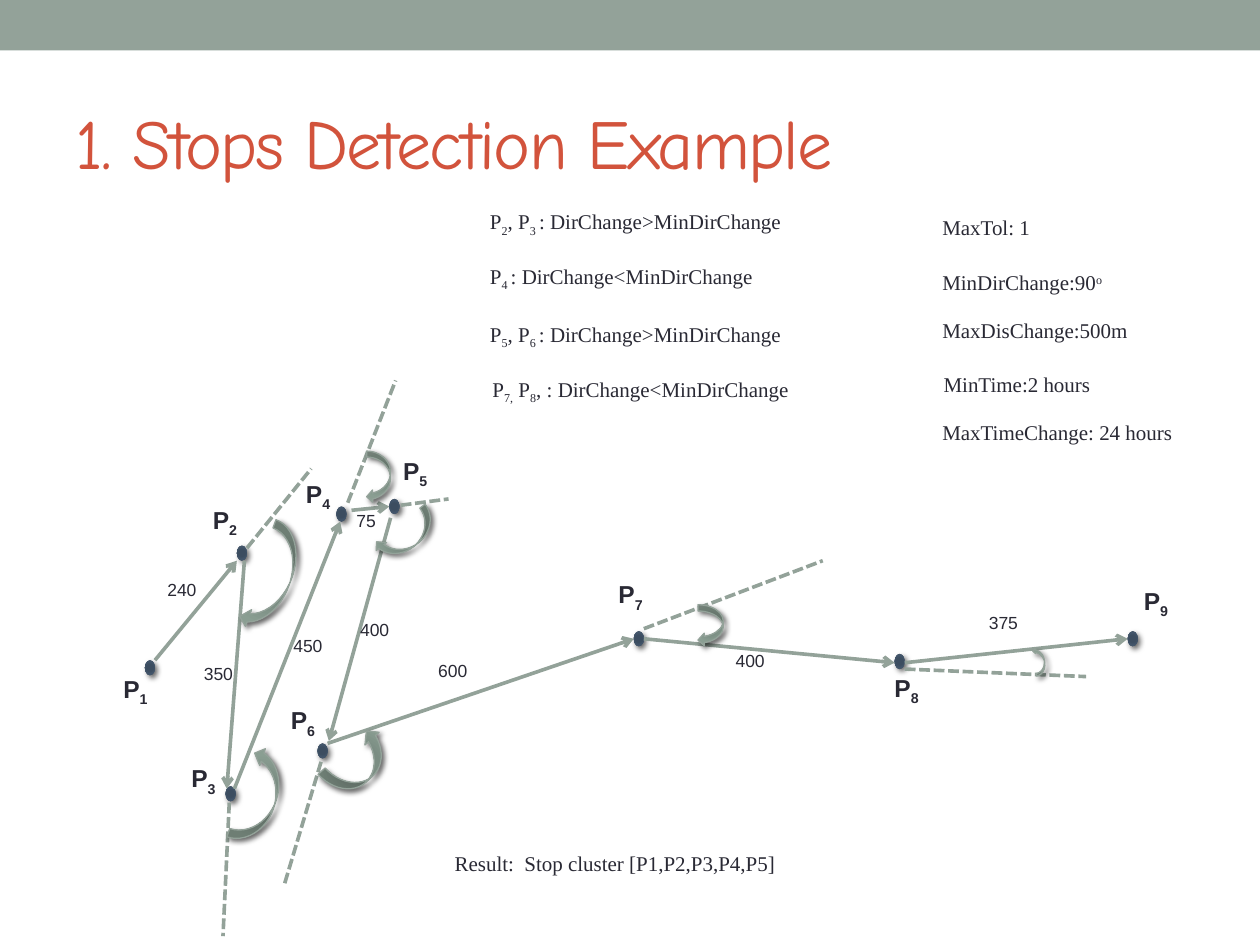
from dataclasses import dataclass

from pptx import Presentation
from pptx import util as u
from pptx.dml.color import RGBColor
from pptx.enum import dml, shapes, text
from pptx.oxml import parse_xml
from pptx.oxml.ns import nsdecls

GEOMETRY = shapes.MSO_SHAPE


@dataclass(frozen=True)
class Theme:
    sage: str = "93A299"
    red: str = "D2533C"
    ink: str = "292934"
    dot_stops: tuple = ((0, "3B4D61"), (34, "3C4D60"), (70, "43566B"), (100, "4C5A6A"))
    arc_stops: tuple = ((0, "7B8E82"), (34, "7B8D83"), (70, "8A9E92"), (100, "93A299"))
    line_width: float = 2.08
    arc_outline: float = 0.75
    title: tuple = ("Comic Neue", 40, False)
    point: tuple = ("Arial", 14, True)
    distance: tuple = ("Arial", 10, False)
    note: tuple = ("Times New Roman", 12, False)


def apply_format(target, values):
    for name, value in values.items():
        setattr(target, name, value)


class SlideBuilder:
    def __init__(self, presentation, theme):
        self.theme = theme
        self.slide = presentation.slides.add_slide(presentation.slide_layouts[5])
        self.shapes = self.slide.shapes

    def start_group(self):
        """Send the elements that follow into a new group."""
        self.shapes = self.slide.shapes.add_group_shape().shapes

    def end_group(self):
        self.shapes = self.slide.shapes

    def format_font(self, font, style, color):
        name, size, bold = style
        apply_format(font, {"name": name, "size": u.Pt(size), "bold": bold})
        font.color.rgb = RGBColor.from_string(color)

    def title(self, wording, left, top, width, height):
        shape = self.slide.shapes.title
        apply_format(shape, {"left": u.Inches(left), "top": u.Inches(top),
                             "width": u.Inches(width), "height": u.Inches(height)})
        apply_format(shape.text_frame, {"vertical_anchor": text.MSO_ANCHOR.MIDDLE,
                                        "auto_size": text.MSO_AUTO_SIZE.NONE,
                                        "word_wrap": True})
        paragraph = shape.text_frame.paragraphs[0]
        paragraph.alignment = text.PP_ALIGN.LEFT
        run = paragraph.add_run()
        run.text = wording
        self.format_font(run.font, self.theme.title, self.theme.red)
        run._r.get_or_add_rPr().set("spc", "-100")

    def label(self, wording, left, top, width, height, style, shift=-25):
        """Write one line; every second part between bars is shifted off the baseline."""
        box = self.shapes.add_textbox(*map(u.Inches, (left, top, width, height)))
        apply_format(box.text_frame, {"word_wrap": False,
                                      "auto_size": text.MSO_AUTO_SIZE.SHAPE_TO_FIT_TEXT})
        paragraph = box.text_frame.paragraphs[0]
        for index, part in enumerate(wording.split("|")):
            run = paragraph.add_run()
            run.text = part
            self.format_font(run.font, style, self.theme.ink)
            if index % 2:
                run._r.get_or_add_rPr().set("baseline", str(shift * 1000))

    def bar(self, left, top, width, height):
        shape = self.shapes.add_shape(GEOMETRY.RECTANGLE,
                                      *map(u.Inches, (left, top, width, height)))
        shape.shadow.inherit = False
        shape.fill.solid()
        shape.fill.fore_color.rgb = RGBColor.from_string(self.theme.sage)
        shape.line.fill.background()

    def shaded(self, geometry, left, top, width, height, stops):
        """Add a shape with a radial gradient and a soft shadow."""
        shape = self.shapes.add_shape(geometry, *map(u.Inches, (left, top, width, height)))
        shape.shadow.inherit = False
        shape.fill.background()
        stop_list = "".join(f'<a:gs pos="{place * 1000}"><a:srgbClr val="{color}"/></a:gs>'
                            for place, color in stops)
        gradient = parse_xml(
            f'<a:gradFill {nsdecls("a")} rotWithShape="1"><a:gsLst>{stop_list}</a:gsLst>'
            '<a:path path="circle"><a:fillToRect l="100000" t="100000" r="100000"'
            ' b="100000"/></a:path></a:gradFill>')
        properties = shape._element.spPr
        properties.replace(properties.find("{*}noFill"), gradient)
        properties.find("{*}effectLst").append(parse_xml(
            f'<a:outerShdw {nsdecls("a")} blurRad="{u.Pt(3)}" dist="{u.Pt(2)}"'
            ' dir="2700000" algn="tl" rotWithShape="0"><a:srgbClr val="000000">'
            '<a:alpha val="60000"/></a:srgbClr></a:outerShdw>'))
        return shape

    def dot(self, left, top):
        shape = self.shaded(GEOMETRY.OVAL, left, top, 0.08, 0.12, self.theme.dot_stops)
        shape.line.fill.background()

    def arc(self, geometry, left, top, width, height, rotation):
        shape = self.shaded(geometry, left, top, width, height, self.theme.arc_stops)
        shape.rotation = rotation
        shape.line.color.rgb = RGBColor.from_string(self.theme.sage)
        shape.line.width = u.Pt(self.theme.arc_outline)

    def line(self, start_x, start_y, end_x, end_y, dashed=False):
        """Draw a dashed extension, or else a solid step with an arrowhead."""
        connector = self.shapes.add_connector(
            shapes.MSO_CONNECTOR.STRAIGHT,
            *map(u.Inches, (start_x, start_y, end_x, end_y)))
        connector.line.color.rgb = RGBColor.from_string(self.theme.sage)
        connector.line.width = u.Pt(self.theme.line_width)
        if dashed:
            connector.line.dash_style = dml.MSO_LINE.SQUARE_DOT
        else:
            connector.line._get_or_add_ln().append(
                parse_xml(f'<a:tailEnd {nsdecls("a")} type="arrow"/>'))
        connector._element.spPr.append(parse_xml(f'<a:effectLst {nsdecls("a")}/>'))


# Dot left and top, then label left and top, for P1 to P9
POINTS = [
    (1.15, 5.24, 0.88, 5.3), (1.88, 4.33, 1.59, 3.96), (1.79, 6.24, 1.42, 6.01),
    (2.67, 4.02, 2.33, 3.75), (3.09, 3.96, 3.1, 3.57), (2.52, 5.9, 2.21, 5.55),
    (5.03, 5.01, 4.81, 4.55), (7.1, 5.19, 7, 5.29), (8.95, 5.01, 8.98, 4.6),
]
STEPS = [
    (1.23, 5.24, 1.88, 4.45), (1.94, 4.45, 1.8, 6.26), (1.86, 6.26, 2.7, 4.14),
    (2.79, 4.05, 3.09, 4.02), (3.1, 4.11, 2.61, 5.88), (2.6, 5.9, 5.03, 5.07),
    (5.11, 5.07, 7.1, 5.26), (7.18, 5.26, 8.95, 5.07),
]
# Dashed extension, then the arc that marks the turn
TURNS = [
    ((1.96, 4.35, 2.47, 3.72), (GEOMETRY.CURVED_DOWN_ARROW, 1.72, 4.45, 0.89, 0.28, 110.6)),
    ((1.82, 6.37, 1.77, 7.43), (GEOMETRY.CURVED_UP_ARROW, 1.67, 6.18, 0.77, 0.28, 288.3)),
    ((2.76, 3.99, 3.14, 3.02), (GEOMETRY.CURVED_LEFT_ARROW, 2.91, 3.58, 0.19, 0.41, 0)),
    ((2.26, 7.01, 2.55, 6.04), (GEOMETRY.CURVED_UP_ARROW, 2.55, 5.91, 0.59, 0.3, 318.1)),
    ((3.18, 4.01, 3.56, 3.96), (GEOMETRY.CURVED_LEFT_ARROW, 3.12, 3.98, 0.21, 0.54, 52.1)),
    ((5.11, 4.99, 6.53, 4.45), (GEOMETRY.CURVED_LEFT_ARROW, 5.54, 4.8, 0.2, 0.33, 0)),
    ((7.18, 5.31, 8.62, 5.37), (GEOMETRY.CURVED_RIGHT_ARROW, 8.21, 5.14, 0.08, 0.22, 171.2)),
]
DISTANCES = [
    ("75", 2.73, 4, 0.36), ("450", 2.23, 4.99, 0.44), ("600", 3.38, 5.19, 0.44),
    ("400", 2.76, 4.86, 0.44), ("350", 1.52, 5.21, 0.44), ("240", 1.23, 4.55, 0.44),
    ("400", 5.74, 5.11, 0.44), ("375", 7.75, 4.81, 0.44),
]
NOTES = [
    ("P|2|, P|3 |: DirChange>MinDirChange", 3.79, 1.61, 2.55),
    ("P|4 |: DirChange<MinDirChange", 3.79, 2.04, 2.32),
    ("P|5|, P|6 |: DirChange>MinDirChange", 3.79, 2.5, 2.54),
    ("P|7,| P|8|, : DirChange<MinDirChange", 3.81, 2.94, 2.62),
    ("MaxTol: 1", 7.38, 1.65, 0.91),
    ("MaxDisChange:500m", 7.38, 2.47, 1.69),
    ("MinTime:2 hours", 7.39, 2.9, 1.38),
    ("MaxTimeChange: 24 hours", 7.38, 3.28, 2.05),
    ("Result:  Stop cluster [P1,P2,P3,P4,P5]", 3.51, 6.7, 2.82),
]


def main():
    presentation = Presentation()
    apply_format(presentation, {"slide_width": u.Inches(10), "slide_height": u.Inches(7.5)})
    theme = Theme()
    builder = SlideBuilder(presentation, theme)
    builder.bar(0, 0, 10, 0.4)
    builder.title("1. Stops Detection Example", 0.5, 0.58, 9, 1.08)

    for number, (dot_left, dot_top, left, top) in enumerate(POINTS, 1):
        builder.dot(dot_left, dot_top)
        builder.label(f"P|{number}", left, top, 0.41, 0.34, theme.point)
    for step in STEPS:
        builder.line(*step)

    builder.start_group()
    for extension, arc in TURNS:
        builder.line(*extension, dashed=True)
        builder.arc(*arc)
    builder.start_group()
    for wording, left, top, width in DISTANCES:
        builder.label(wording, left, top, width, 0.27, theme.distance)
    builder.end_group()

    for wording, left, top, width in NOTES:
        builder.label(wording, left, top, width, 0.3, theme.note)
    builder.label("MinDirChange:90|o", 7.38, 2.09, 1.49, 0.3, theme.note, shift=30)
    presentation.save("out.pptx")


if __name__ == "__main__":
    main()
